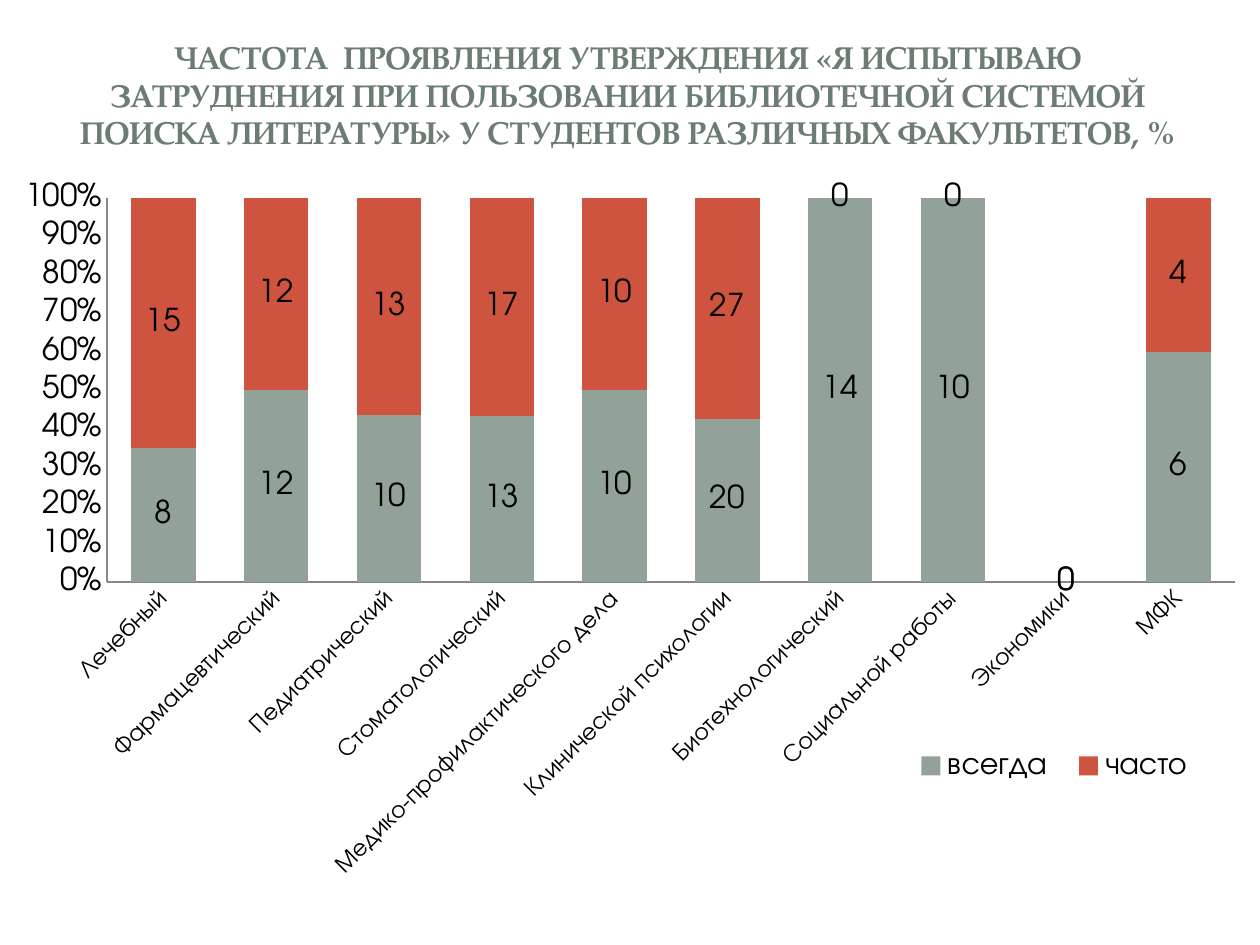
from lxml.etree import SubElement
from pptx import Presentation
from pptx.chart.data import CategoryChartData
from pptx.dml.color import RGBColor
from pptx.enum.chart import XL_CHART_TYPE as ChartType
from pptx.enum.chart import XL_LABEL_POSITION as LabelPosition
from pptx.enum.chart import XL_LEGEND_POSITION as LegendPosition
from pptx.enum.chart import XL_TICK_MARK as TickMark
from pptx.enum.shapes import MSO_SHAPE as ShapeType
from pptx.enum.text import MSO_ANCHOR as Anchor
from pptx.enum.text import PP_ALIGN as Align
from pptx.oxml.ns import qn
from pptx.util import Pt

TITLE = (
    "ЧАСТОТА  ПРОЯВЛЕНИЯ УТВЕРЖДЕНИЯ «Я ИСПЫТЫВАЮ ЗАТРУДНЕНИЯ "
    "ПРИ ПОЛЬЗОВАНИИ БИБЛИОТЕЧНОЙ СИСТЕМОЙ ПОИСКА ЛИТЕРАТУРЫ» "
    "У СТУДЕНТОВ РАЗЛИЧНЫХ ФАКУЛЬТЕТОВ, %"
)
FACULTIES = [
    "Лечебный", "Фармацевтический", "Педиатрический", "Стоматологический",
    "Медико-профилактического дела", "Клинической психологии",
    "Биотехнологический", "Социальной работы", "Экономики", "МФК",
]
SERIES = {
    "всегда": (8, 12, 10, 13, 10, 20, 14, 10, 0, 6),
    "часто": (15, 12, 13, 17, 10, 27, 0, 0, 0, 4),
}
COLORS = {
    "title": "6B7D72", "text": "000000", "axis": "868686", "panel": "FFFFFF",
    "всегда": "93A299", "часто": "CF543F",
}
TITLE_FONT, CHART_FONT = "TeX Gyre Pagella", "TeX Gyre Adventor"

EMU_PER_PX = 914400 // 126
SLIDE_SIZE = (1260, 945)
TITLE_PANELS = [((38, 38, 1184, 183), 83), ((52, 52, 1155, 154), 100)]
TITLE_BOX = (59, 57, 1138, 143)
CHART_BOX = (0, 168, 1260, 777)
PLOT_BOX = (107, 198, 1128, 384)
LEGEND_BOX = (900, 741, 308, 50)


def px(*lengths):
    return [length * EMU_PER_PX for length in lengths]


def apply(target, **values):
    for name, value in values.items():
        setattr(target, name, value)


def color(name):
    return RGBColor.from_string(COLORS[name])


def style_font(font, face, size, color_name, bold=False):
    apply(font, name=face, size=Pt(size), bold=bold)
    font.color.rgb = color(color_name)


def place(parent, index, box, inner=False):
    for old in parent.findall(qn("c:layout")):
        parent.remove(old)
    layout = parent.makeelement(qn("c:layout"), {})
    parent.insert(index, layout)
    manual = SubElement(layout, qn("c:manualLayout"))
    left, top, width, height = CHART_BOX
    values = {"layoutTarget": "inner"} if inner else {}
    values |= {
        "xMode": "edge", "yMode": "edge",
        "x": (box[0] - left) / width, "y": (box[1] - top) / height,
        "w": box[2] / width, "h": box[3] / height,
    }
    for tag, value in values.items():
        SubElement(manual, qn(f"c:{tag}")).set("val", str(value))


def add_panel(slide, box, opacity):
    shape = slide.shapes.add_shape(ShapeType.RECTANGLE, *px(*box))
    shape.shadow.inherit = False
    shape.line.fill.background()
    shape.fill.solid()
    shape.fill.fore_color.rgb = color("panel")
    fill = shape._element.spPr.find(f"{qn('a:solidFill')}/{qn('a:srgbClr')}")
    SubElement(fill, qn("a:alpha")).set("val", str(opacity * 1000))


def add_title(slide):
    frame = slide.shapes.add_textbox(*px(*TITLE_BOX)).text_frame
    apply(frame, word_wrap=True, vertical_anchor=Anchor.MIDDLE,
          margin_top=0, margin_bottom=px(68)[0])
    paragraph = frame.paragraphs[0]
    paragraph.alignment = Align.CENTER
    run = paragraph.add_run()
    run.text = TITLE
    style_font(run.font, TITLE_FONT, 18, "title", True)


def add_chart(slide):
    data = CategoryChartData()
    data.categories = FACULTIES
    for name, values in SERIES.items():
        data.add_series(name, values)
    chart = slide.shapes.add_chart(
        ChartType.COLUMN_STACKED_100, *px(*CHART_BOX), data).chart
    apply(chart, has_title=False, has_legend=True)
    style_font(chart.font, CHART_FONT, 18, "text")

    plot = chart.plots[0]
    apply(plot, gap_width=75, overlap=100, vary_by_categories=False)
    for series in plot.series:
        series.format.fill.solid()
        series.format.fill.fore_color.rgb = color(series.name)
        labels = series.data_labels
        apply(labels, show_value=True, position=LabelPosition.CENTER)
        style_font(labels.font, CHART_FONT, 18, "text")

    for axis, size in ((chart.category_axis, 14), (chart.value_axis, 18)):
        apply(axis, has_major_gridlines=False,
              major_tick_mark=TickMark.NONE, minor_tick_mark=TickMark.NONE)
        style_font(axis.tick_labels.font, CHART_FONT, size, "text")
        axis.format.line.color.rgb = color("axis")
        axis.format.line.width = Pt(0.75)
    apply(chart.value_axis, minimum_scale=0, maximum_scale=1, major_unit=0.1)
    apply(chart.value_axis.tick_labels,
          number_format="0%", number_format_is_linked=False)
    chart.category_axis._element.find(
        f"{qn('c:txPr')}/{qn('a:bodyPr')}").set("rot", "-2700000")

    apply(chart.legend, position=LegendPosition.BOTTOM, include_in_layout=False)
    style_font(chart.legend.font, CHART_FONT, 18, "text")
    chart_element = chart._chartSpace.find(qn("c:chart"))
    place(chart_element.find(qn("c:plotArea")), 0, PLOT_BOX, inner=True)
    place(chart_element.find(qn("c:legend")), 1, LEGEND_BOX)


def main():
    presentation = Presentation()
    width, height = px(*SLIDE_SIZE)
    apply(presentation, slide_width=width, slide_height=height)
    slide = presentation.slides.add_slide(presentation.slide_layouts[6])
    for box, opacity in TITLE_PANELS:
        add_panel(slide, box, opacity)
    add_title(slide)
    add_chart(slide)
    presentation.save("out.pptx")


if __name__ == "__main__":
    main()
